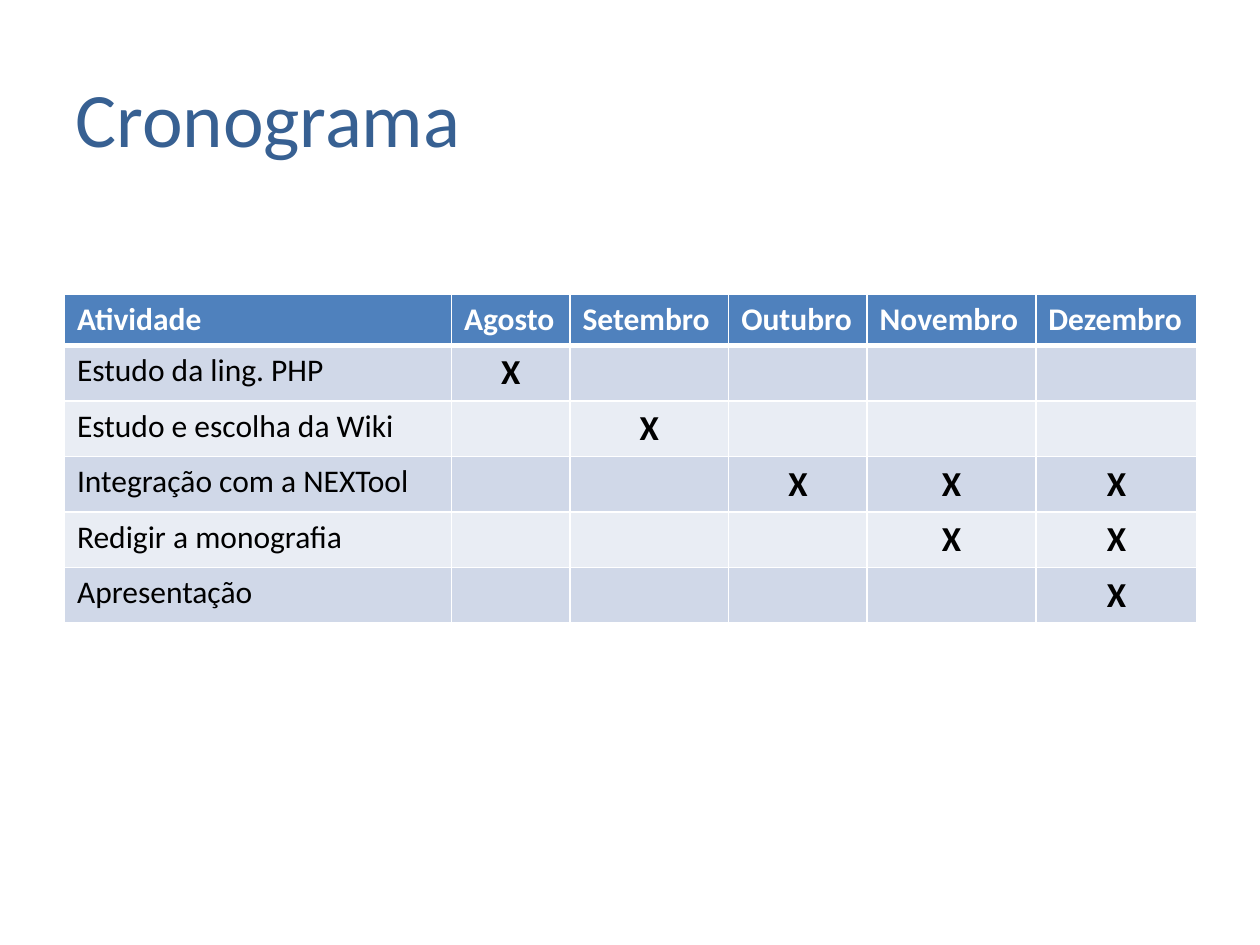
from dataclasses import dataclass

from lxml.etree import SubElement
from pptx import Presentation
from pptx.dml.color import RGBColor
from pptx.enum.text import MSO_ANCHOR, PP_ALIGN
from pptx.oxml.ns import qn
from pptx.slide import Slide
from pptx.table import _Cell
from pptx.util import Cm, Pt

COLORS = {
    "title": "376092",
    "header": "4F81BD",
    "odd": "D0D8E8",
    "even": "E9EDF4",
    "white": "FFFFFF",
    "black": "000000",
}
FONT = "Calibri"
MONTHS = ["Agosto", "Setembro", "Outubro", "Novembro", "Dezembro"]
COL_WIDTHS = [7.8, 2.39, 3.2, 2.79, 3.4, 3.25]
HEADER_HEIGHT, ROW_HEIGHT = 1.03, 1.12


@dataclass
class Activity:
    name: str
    months: list[str]


ACTIVITIES = [
    Activity("Estudo da ling. PHP", ["Agosto"]),
    Activity("Estudo e escolha da Wiki", ["Setembro"]),
    Activity("Integração com a NEXTool", ["Outubro", "Novembro", "Dezembro"]),
    Activity("Redigir a monografia", ["Novembro", "Dezembro"]),
    Activity("Apresentação", ["Dezembro"]),
]


def format_text(tf, size: int, color: str, bold: bool = False) -> None:
    for p in tf.paragraphs:
        for r in p.runs:
            r.font.name = FONT
            r.font.size = Pt(size)
            r.font.bold = bold
            r.font.color.rgb = RGBColor.from_string(COLORS[color])


def set_borders(cell: _Cell, bottom: int = 1, top: int = 1) -> None:
    """Draw white borders, given in points; they must precede the cell fill."""
    tc_pr = cell._tc.get_or_add_tcPr()
    for side, width in (("L", 1), ("R", 1), ("T", top), ("B", bottom)):
        ln = SubElement(tc_pr, qn(f"a:ln{side}"), w=str(Pt(width)))
        fill = SubElement(ln, qn("a:solidFill"))
        SubElement(fill, qn("a:srgbClr"), val=COLORS["white"])


def fill_cell(cell: _Cell, color: str) -> None:
    cell.fill.solid()
    cell.fill.fore_color.rgb = RGBColor.from_string(COLORS[color])


def add_title(s: Slide, text: str) -> None:
    sp = s.shapes.add_textbox(Cm(1.27), Cm(0.76), Cm(22.86), Cm(3.18))
    tf = sp.text_frame
    tf.word_wrap = True
    tf.vertical_anchor = MSO_ANCHOR.MIDDLE
    tf.text = text
    format_text(tf, 44, "title")


def add_schedule(s: Slide) -> None:
    heights = [HEADER_HEIGHT] + [ROW_HEIGHT] * len(ACTIVITIES)
    table = s.shapes.add_table(
        len(heights), len(COL_WIDTHS),
        Cm(1.3), Cm(5.93), Cm(sum(COL_WIDTHS)), Cm(sum(heights)),
    ).table
    for col, width in zip(table.columns, COL_WIDTHS):
        col.width = Cm(width)
    for row, height in zip(table.rows, heights):
        row.height = Cm(height)

    for i, text in enumerate(["Atividade"] + MONTHS):
        cell = table.cell(0, i)
        set_borders(cell, bottom=3)
        fill_cell(cell, "header")
        cell.text_frame.text = text
        format_text(cell.text_frame, 18, "white", bold=True)

    for i, activity in enumerate(ACTIVITIES, start=1):
        marks = ["X" if month in activity.months else "" for month in MONTHS]
        for j, text in enumerate([activity.name] + marks):
            cell = table.cell(i, j)
            set_borders(cell, top=3 if i == 1 else 1)
            fill_cell(cell, "odd" if i % 2 else "even")
            if not text:
                continue
            tf = cell.text_frame
            tf.text = text
            if j == 0:
                format_text(tf, 18, "black")
            else:
                tf.paragraphs[0].alignment = PP_ALIGN.CENTER
                format_text(tf, 20, "black", bold=True)


def main() -> None:
    prs = Presentation()
    prs.slide_width, prs.slide_height = Cm(25.4), Cm(19.05)
    s = prs.slides.add_slide(prs.slide_layouts[6])
    add_title(s, "Cronograma")
    add_schedule(s)
    prs.save("out.pptx")


if __name__ == "__main__":
    main()
